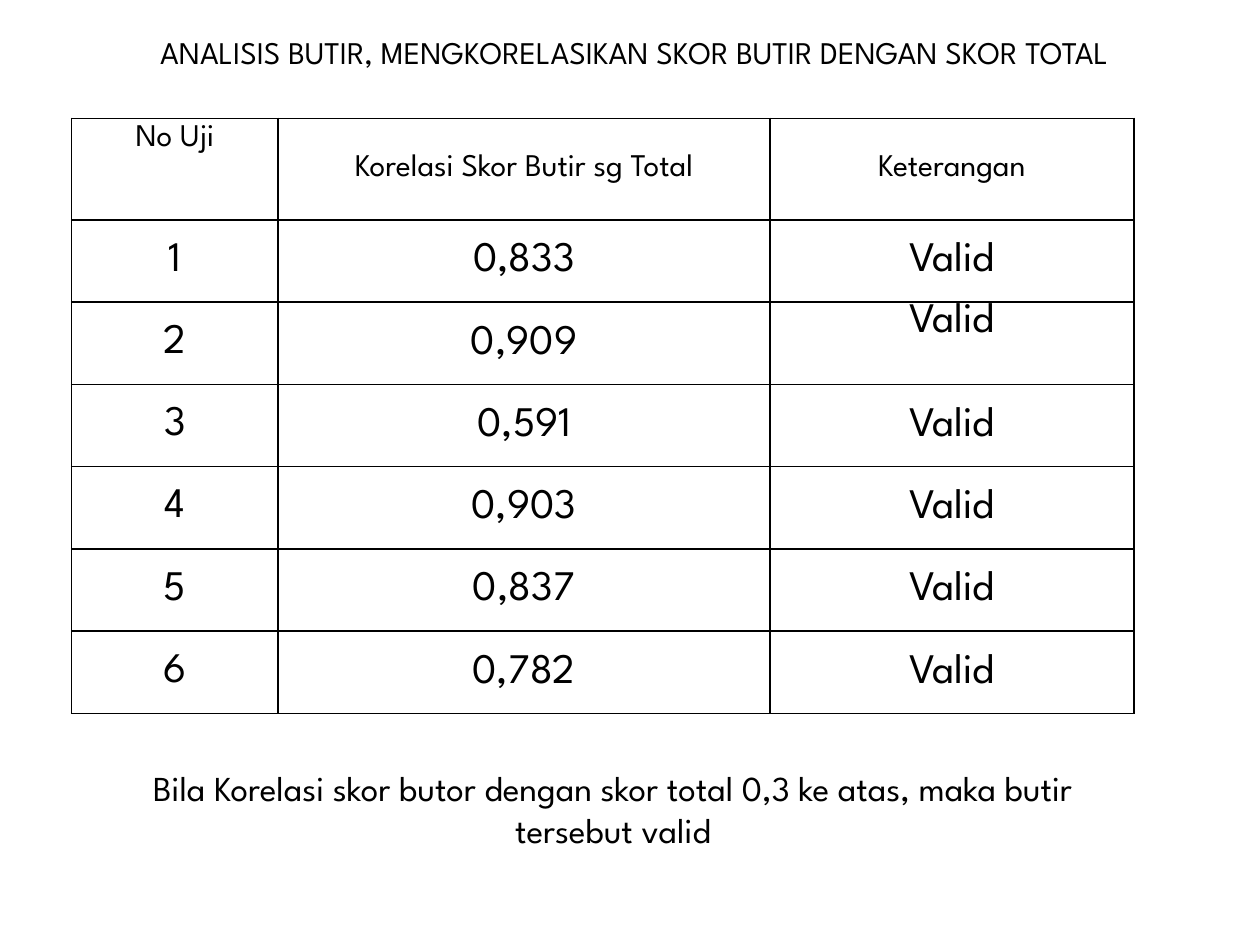
"""Build the item-analysis slide with its validity table and conclusion."""
from dataclasses import dataclass

from lxml.etree import SubElement
from pptx import Presentation
from pptx.dml.color import RGBColor
from pptx.enum.text import MSO_ANCHOR, MSO_AUTO_SIZE, PP_ALIGN
from pptx.oxml.ns import qn
from pptx.slide import Slide
from pptx.table import _Cell
from pptx.text.text import TextFrame
from pptx.util import Pt

BLACK = RGBColor(0x00, 0x00, 0x00)
FONT = "League Spartan"
HEADERS = ("No Uji", "Korelasi Skor Butir sg Total", "Keterangan")
SCORES = ("0,833", "0,909", "0,591", "0,903", "0,837", "0,782")
COL_WIDTHS = (118, 281, 208)
HEADER_HEIGHT, ROW_HEIGHT = 58, 47
TOP_CELLS = {(0, 0), (2, 2)}


@dataclass(frozen=True)
class Caption:
    """A centred text box, measured in points."""

    text: str
    left: float
    top: float
    width: float
    height: float
    size: float


CAPTIONS = (
    Caption("ANALISIS BUTIR, MENGKORELASIKAN SKOR BUTIR DENGAN SKOR TOTAL",
            76.3, 15.1, 572.4, 51.1, 18),
    Caption("Bila Korelasi skor butor dengan skor total 0,3 ke atas, maka butir tersebut valid",
            49.7, 434.2, 601.2, 55.4, 20),
)


def write(tf: TextFrame, text: str, size: float) -> None:
    """Write one centred run in the slide font."""
    p = tf.paragraphs[0]
    p.alignment = PP_ALIGN.CENTER
    r = p.add_run()
    r.text = text
    r.font.name = FONT
    r.font.size = Pt(size)
    r.font.color.rgb = BLACK


def add_caption(s: Slide, caption: Caption) -> None:
    """Add a wrapped caption."""
    sp = s.shapes.add_textbox(Pt(caption.left), Pt(caption.top),
                              Pt(caption.width), Pt(caption.height))
    tf = sp.text_frame
    tf.word_wrap = True
    tf.auto_size = MSO_AUTO_SIZE.SHAPE_TO_FIT_TEXT
    write(tf, caption.text, caption.size)


def add_borders(cell: _Cell) -> None:
    """Give a cell a thin black line on every side."""
    tc_pr = cell._tc.get_or_add_tcPr()
    for i, side in enumerate(("lnL", "lnR", "lnT", "lnB")):
        ln = SubElement(tc_pr, qn(f"a:{side}"), w=str(Pt(1)))
        fill = SubElement(ln, qn("a:solidFill"))
        SubElement(fill, qn("a:srgbClr"), val=str(BLACK))
        tc_pr.insert(i, ln)


def add_score_table(s: Slide) -> None:
    """Add the table of correlations and verdicts."""
    rows = [HEADERS] + [(str(i), score, "Valid") for i, score in enumerate(SCORES, 1)]
    heights = [HEADER_HEIGHT] + [ROW_HEIGHT] * len(SCORES)
    table = s.shapes.add_table(len(rows), len(HEADERS), Pt(41), Pt(67.7),
                               Pt(sum(COL_WIDTHS)), Pt(sum(heights))).table
    table.first_row = table.horz_banding = False
    for col, width in zip(table.columns, COL_WIDTHS):
        col.width = Pt(width)
    for i, (values, height) in enumerate(zip(rows, heights)):
        table.rows[i].height = Pt(height)
        for j, value in enumerate(values):
            cell = table.cell(i, j)
            cell.fill.background()
            add_borders(cell)
            cell.vertical_anchor = MSO_ANCHOR.TOP if (i, j) in TOP_CELLS else MSO_ANCHOR.MIDDLE
            if i and j:
                cell.margin_left = cell.margin_right = cell.margin_top = Pt(0.7)
                cell.margin_bottom = Pt(0)
            write(cell.text_frame, value, 24 if i else 18)


def main() -> None:
    """Build and save the slide."""
    prs = Presentation()
    prs.slide_width, prs.slide_height = Pt(720), Pt(540)
    s = prs.slides.add_slide(prs.slide_layouts[6])
    add_score_table(s)
    for caption in CAPTIONS:
        add_caption(s, caption)
    prs.save("out.pptx")


if __name__ == "__main__":
    main()
